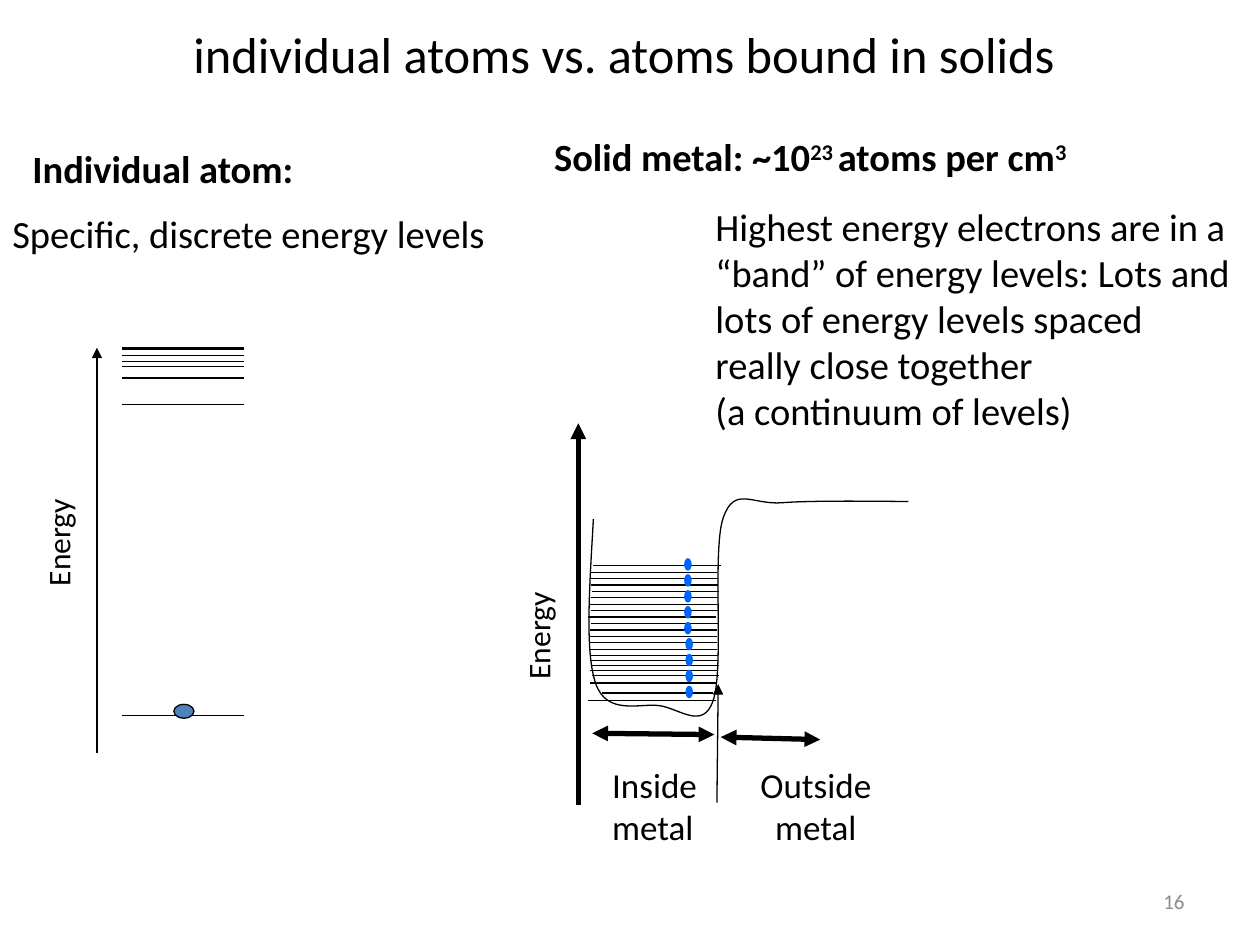
from dataclasses import dataclass
from typing import Optional

from pptx import Presentation
from pptx.dml.color import RGBColor
from pptx.enum.shapes import MSO_CONNECTOR, MSO_SHAPE
from pptx.enum.text import MSO_ANCHOR, MSO_AUTO_SIZE, PP_ALIGN
from pptx.oxml.ns import qn
from pptx.util import Inches, Pt
from lxml.etree import SubElement

FONT = "Calibri"
BLACK, GRAY, BLUE, STEEL = "000000", "8C8C8C", "0066FF", "4F81BD"
THIN, THICK = 0.75, 3


@dataclass
class Span:
    text: str
    bold: bool = False
    raised: bool = False
    size: Optional[float] = None


@dataclass
class Label:
    left: float
    top: float
    width: float
    height: float
    paragraphs: list[list[Span]]
    size: float = 22
    color: str = BLACK
    align: PP_ALIGN = PP_ALIGN.LEFT
    anchor: MSO_ANCHOR = MSO_ANCHOR.TOP
    rotation: float = 0


@dataclass
class Line:
    start: tuple[float, float]
    end: tuple[float, float]
    width: float = THIN
    head: bool = False
    tail: bool = False


def rgb(color: str) -> RGBColor:
    return RGBColor.from_string(color)


def fill_text(shape, label: Label) -> None:
    """Place a text shape and write its paragraphs run by run."""
    shape.left, shape.top = Inches(label.left), Inches(label.top)
    shape.width, shape.height = Inches(label.width), Inches(label.height)
    shape.rotation = label.rotation
    frame = shape.text_frame
    frame.word_wrap = True
    frame.auto_size = MSO_AUTO_SIZE.NONE
    frame.vertical_anchor = label.anchor
    for index, spans in enumerate(label.paragraphs):
        para = frame.paragraphs[0] if index == 0 else frame.add_paragraph()
        para.alignment = label.align
        for span in spans:
            run = para.add_run()
            run.text = span.text
            font = run.font
            font.name, font.bold = FONT, span.bold
            font.size = Pt(span.size or label.size)
            font.color.rgb = rgb(label.color)
            if span.raised:
                font._element.set("baseline", "30000")


def add_label(page, label: Label) -> None:
    fill_text(page.shapes.add_textbox(0, 0, 0, 0), label)


def add_line(page, line: Line) -> None:
    connector = page.shapes.add_connector(
        MSO_CONNECTOR.STRAIGHT, *map(Inches, line.start + line.end))
    connector.line.color.rgb = rgb(BLACK)
    connector.line.width = Pt(line.width)
    outline = connector.line._get_or_add_ln()
    for name, present in (("a:headEnd", line.head), ("a:tailEnd", line.tail)):
        if present:
            SubElement(outline, qn(name), type="triangle")
    SubElement(connector._element.spPr, qn("a:effectLst"))


def add_electron(page, left: float, top: float, width: float, height: float,
                 color: str, outline: Optional[str] = None) -> None:
    dot = page.shapes.add_shape(
        MSO_SHAPE.OVAL, *map(Inches, (left, top, width, height)))
    dot.shadow.inherit = False
    dot.fill.solid()
    dot.fill.fore_color.rgb = rgb(color)
    if outline:
        dot.line.color.rgb = rgb(outline)
        dot.line.width = Pt(THIN)
    else:
        dot.line.fill.background()


def add_curve(page, knots: list[tuple[float, float]]) -> None:
    """Draw chained cubic curves: a start, then two controls and an end each."""
    points = [(Inches(x), Inches(y)) for x, y in knots]
    builder = page.shapes.build_freeform(*points[0])
    builder.add_line_segments(points[1:], close=False)
    curve = builder.convert_to_shape()
    # Turn each three straight segments into one cubic curve
    outline = next(curve._element.iter(qn("a:path")))
    segments = outline.findall(qn("a:lnTo"))
    for first in range(0, len(segments), 3):
        cubic = SubElement(outline, qn("a:cubicBezTo"))
        for segment in segments[first:first + 3]:
            cubic.append(segment[0])
            outline.remove(segment)
    curve.shadow.inherit = False
    curve.fill.background()
    curve.line.color.rgb = rgb(BLACK)
    curve.line.width = Pt(THIN)


def draw_solid(page) -> None:
    # Potential well
    add_curve(page, [
        (4.71, 4.12), (4.68, 4.65), (4.64, 5.18), (4.73, 5.43),
        (4.82, 5.68), (5.08, 5.58), (5.23, 5.6),
        (5.39, 5.62), (5.58, 5.8), (5.66, 5.56),
        (5.75, 5.31), (5.65, 4.37), (5.74, 4.11),
        (5.83, 3.85), (5.97, 4.01), (6.21, 3.99),
        (6.46, 3.97), (7.04, 3.98), (7.21, 3.98)])
    # Band: even spacing above, wider gaps near the bottom
    heights = [4.49 + 0.051 * i for i in range(15)]
    heights += [5.24, 5.28, 5.32, 5.36, 5.42, 5.56]
    lefts = [4.71, 4.68, 4.69, 4.69, 4.7, 4.69, 4.68, 4.69, 4.67, 4.69, 4.68,
             4.68, 4.68, 4.68, 4.69, 4.69, 4.7, 4.68, 4.7, 4.68, 4.67]
    for left, y in zip(lefts, heights):
        add_line(page, Line((left, y), (left + 1.01, y)))
    add_line(page, Line((4.78, 5.5), (5.66, 5.5)))
    for i in range(9):
        add_electron(page, 5.43 if i < 5 else 5.44, 4.43 + 0.1265 * i, 0.06, 0.1, BLUE)
    # Energy axis, region widths and the metal surface
    for line in (
        Line((4.59, 6.39), (4.59, 3.36), THICK, tail=True),
        Line((4.7, 5.82), (5.67, 5.83), THICK, head=True, tail=True),
        Line((5.72, 5.85), (6.51, 5.87), THICK, head=True, tail=True),
        Line((5.69, 6.37), (5.7, 5.43), tail=True),
    ):
        add_line(page, line)


def draw_atom(page) -> None:
    for y in (2.76, 2.77, 2.82, 2.87, 2.91, 3, 3.21, 5.68):
        add_line(page, Line((0.97, y), (1.94, y)))
    add_electron(page, 1.38, 5.59, 0.16, 0.11, STEEL, BLACK)
    add_line(page, Line((0.77, 5.98), (0.77, 2.76), tail=True))


def main() -> None:
    deck = Presentation()
    deck.slide_width, deck.slide_height = Inches(10), Inches(7.5)
    page = deck.slides.add_slide(deck.slide_layouts[5])
    fill_text(page.shapes.title, Label(
        0.5, 0.14, 9, 0.57, [[Span("individual atoms vs. atoms bound in solids ")]],
        28.8, align=PP_ALIGN.CENTER, anchor=MSO_ANCHOR.MIDDLE))

    draw_solid(page)
    draw_atom(page)

    energy = [[Span("Energy")]]
    for label in (
        # Solid metal
        Label(4.3, 1.01, 4.36, 0.47, [[
            Span("Solid metal: ~10", True), Span("23 ", True, True),
            Span("atoms per cm", True), Span("3", True, True)]]),
        Label(5.58, 1.56, 4.32, 1.95, [
            [Span("Highest energy electrons are in a “band” of energy levels: "
                  "Lots and lots of energy levels spaced really close together")],
            [Span("(a continuum of levels)")]]),
        Label(3.69, 4.61, 1.26, 0.5, energy, 18, rotation=270),
        Label(4.76, 6.01, 1.02, 0.77, [[Span("Inside")], [Span("metal")]], 20),
        Label(5.67, 6.01, 1.61, 0.77, [[Span("Outside metal")]], 20,
              align=PP_ALIGN.CENTER),
        # Individual atom
        Label(0.16, 1.1, 2.3, 0.47,
              [[Span("Individual atom:", True), Span(" ", True, size=18)]]),
        Label(0, 1.62, 4.29, 0.47,
              [[Span("Specific, discrete energy levels"), Span(" ", size=18)]]),
        Label(-0.12, 3.87, 1.26, 0.5, energy, 18, rotation=270),
        # Page number
        Label(7.17, 6.95, 2.33, 0.4, [[Span("16")]], 12, GRAY,
              PP_ALIGN.RIGHT, MSO_ANCHOR.MIDDLE),
    ):
        add_label(page, label)
    deck.save("out.pptx")


if __name__ == "__main__":
    main()
